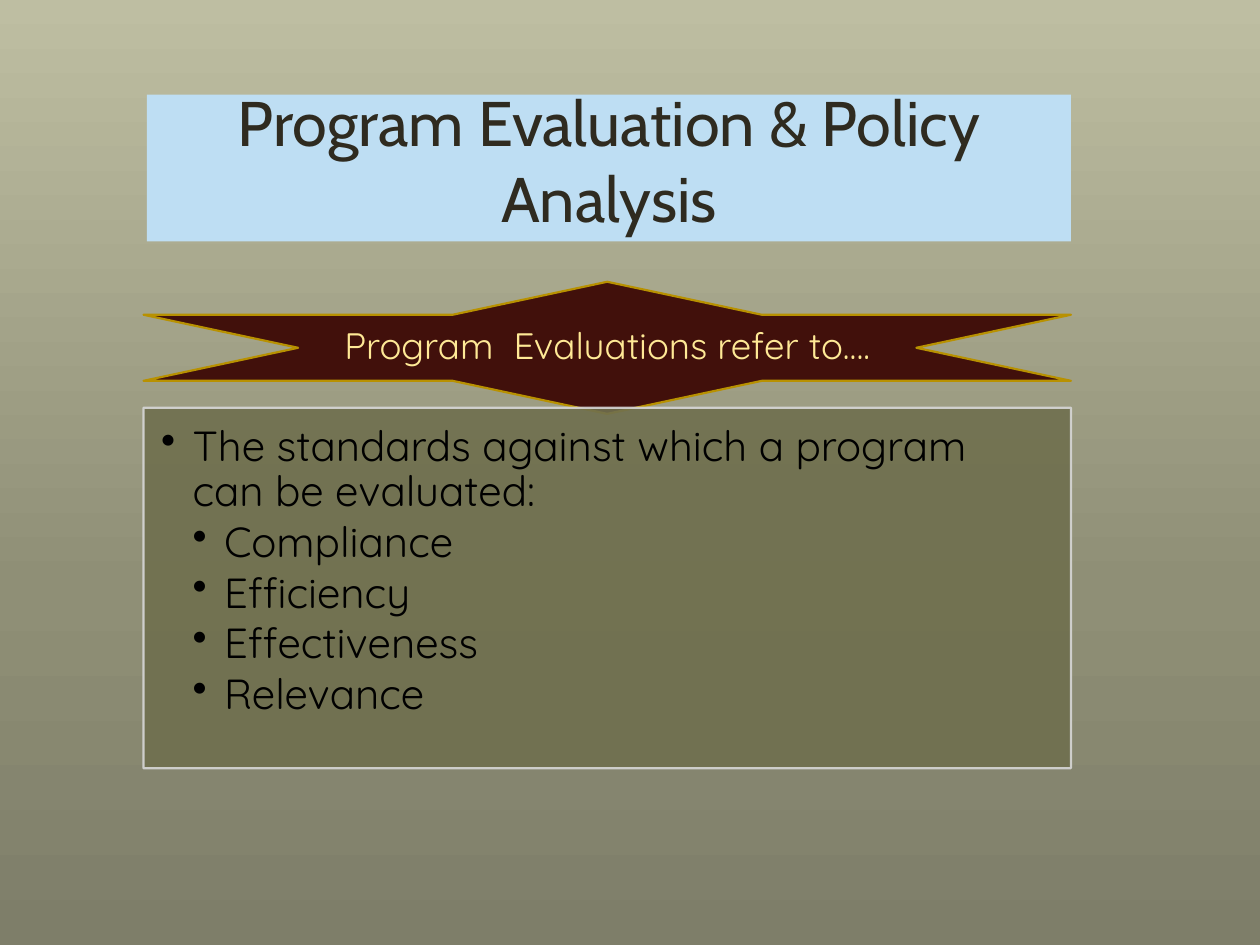
from copy import deepcopy

from pptx import Presentation
from pptx.dml.color import RGBColor
from pptx.enum.shapes import MSO_SHAPE as Shape
from pptx.enum.text import MSO_ANCHOR as Anchor, PP_ALIGN as Align
from pptx.oxml.ns import qn
from pptx.util import Pt

SKY = RGBColor(0xBE, 0xDE, 0xF3)
INK = RGBColor(0x2F, 0x2B, 0x20)
MAROON = RGBColor(0x41, 0x10, 0x0B)
GOLD = RGBColor(0xB8, 0x91, 0x01)
CREAM = RGBColor(0xFF, 0xE9, 0x96)
OLIVE = RGBColor(0x6F, 0x6F, 0x4E)
SILVER = RGBColor(0xD7, 0xD7, 0xD7)
BLACK = RGBColor(0, 0, 0)
BACKDROP = (
    (0, RGBColor(0xBE, 0xBE, 0xA2)),
    (0.62, RGBColor(0x8F, 0x8F, 0x76)),
    (1, RGBColor(0x7E, 0x7E, 0x69)),
)

TITLE_FONT = {"name": "Cabin", "size": Pt(36), "bold": False}
BANNER_FONT = {"name": "Quicksand", "size": Pt(21)}
CRITERIA_FONT = {"name": "Quicksand", "size": Pt(24)}
BANNER_FRAME = {
    "word_wrap": True, "vertical_anchor": Anchor.MIDDLE,
    "margin_left": Pt(11.5), "margin_right": Pt(11.5),
    "margin_top": Pt(6.5), "margin_bottom": Pt(6.5),
}
CRITERIA_FRAME = {
    "word_wrap": True, "vertical_anchor": Anchor.TOP,
    "margin_left": Pt(10), "margin_right": Pt(13.5),
    "margin_top": Pt(10), "margin_bottom": Pt(15),
}
CRITERIA = (
    (0, "The standards against which a program can be evaluated:"),
    (1, "Compliance"),
    (1, "Efficiency"),
    (1, "Effectiveness"),
    (1, "Relevance"),
)


def set_format(target, values):
    """Set each named attribute of the target."""
    for name, value in values.items():
        setattr(target, name, value)


def write(paragraph, text, font, color):
    """Add a formatted run to the paragraph."""
    run = paragraph.add_run()
    run.text = text
    set_format(run.font, font)
    run.font.color.rgb = color


def make_translucent(fill, percent):
    """Give a solid fill the stated opacity."""
    alpha = fill.fore_color._xFill[0].makeelement(qn("a:alpha"), {"val": str(percent * 1000)})
    fill.fore_color._xFill[0].append(alpha)


def add_panel(slide, kind, box, fill, outline):
    """Add a filled and outlined shape without a shadow."""
    panel = slide.shapes.add_shape(kind, *map(Pt, box))
    panel.shadow.inherit = False
    panel.fill.solid()
    panel.fill.fore_color.rgb = fill
    panel.line.color.rgb = outline
    panel.line.width = Pt(1.25)
    return panel


def paint_backdrop(slide):
    """Fill the background with a gradient running downwards."""
    fill = slide.background.fill
    fill.gradient()
    fill.gradient_angle = 270
    stop_list = fill._fill._gradFill.find(qn("a:gsLst"))
    stop_list.append(deepcopy(stop_list[-1]))
    for stop, (position, color) in zip(fill.gradient_stops, BACKDROP):
        stop.position = position
        stop.color.rgb = color


def place_title(slide, box, text):
    """Move and format the title placeholder."""
    title = slide.shapes.title
    set_format(title, dict(zip(("left", "top", "width", "height"), map(Pt, box))))
    title.fill.solid()
    title.fill.fore_color.rgb = SKY
    set_format(title.text_frame, {"word_wrap": True, "vertical_anchor": Anchor.BOTTOM})
    heading = title.text_frame.paragraphs[0]
    heading.alignment = Align.CENTER
    write(heading, text, TITLE_FONT, INK)


def add_banner(slide, box, text):
    """Draw the star banner with its caption across the middle."""
    left, top, width, height = box
    add_panel(slide, Shape.STAR_6_POINT, box, MAROON, GOLD)
    caption_box = (left + width / 6, top + height / 4, width * 2 / 3, height / 2)
    frame = slide.shapes.add_textbox(*map(Pt, caption_box)).text_frame
    set_format(frame, BANNER_FRAME)
    caption = frame.paragraphs[0]
    set_format(caption, {"alignment": Align.CENTER, "line_spacing": 0.9})
    write(caption, text, BANNER_FONT, CREAM)


def add_criteria(slide, box, criteria):
    """Draw the translucent panel with its two-level bullet list."""
    panel = add_panel(slide, Shape.RECTANGLE, box, OLIVE, SILVER)
    for fill in (panel.fill, panel.line.fill):
        make_translucent(fill, 90)
    frame = panel.text_frame
    set_format(frame, CRITERIA_FRAME)
    for index, (level, text) in enumerate(criteria):
        item = frame.add_paragraph() if index else frame.paragraphs[0]
        set_format(item, {"level": level, "alignment": Align.LEFT,
                          "line_spacing": 0.9, "space_after": Pt(3)})
        properties = item._p.get_or_add_pPr()
        properties.set("marL", str(Pt(18 * (level + 1))))
        properties.set("indent", str(-Pt(18)))
        properties.append(properties.makeelement(qn("a:buChar"), {"char": "•"}))
        write(item, text, CRITERIA_FONT, BLACK)


def main():
    """Build the slide and save it."""
    deck = Presentation()
    deck.slide_width, deck.slide_height = Pt(720), Pt(540)
    slide = deck.slides.add_slide(deck.slide_layouts[5])
    paint_backdrop(slide)
    place_title(slide, (84, 54, 528, 84), "Program Evaluation & Policy Analysis")
    add_banner(slide, (82, 161, 530, 75.5), "Program  Evaluations refer to….")
    add_criteria(slide, (82, 233, 530, 206), CRITERIA)
    deck.save("out.pptx")


if __name__ == "__main__":
    main()
